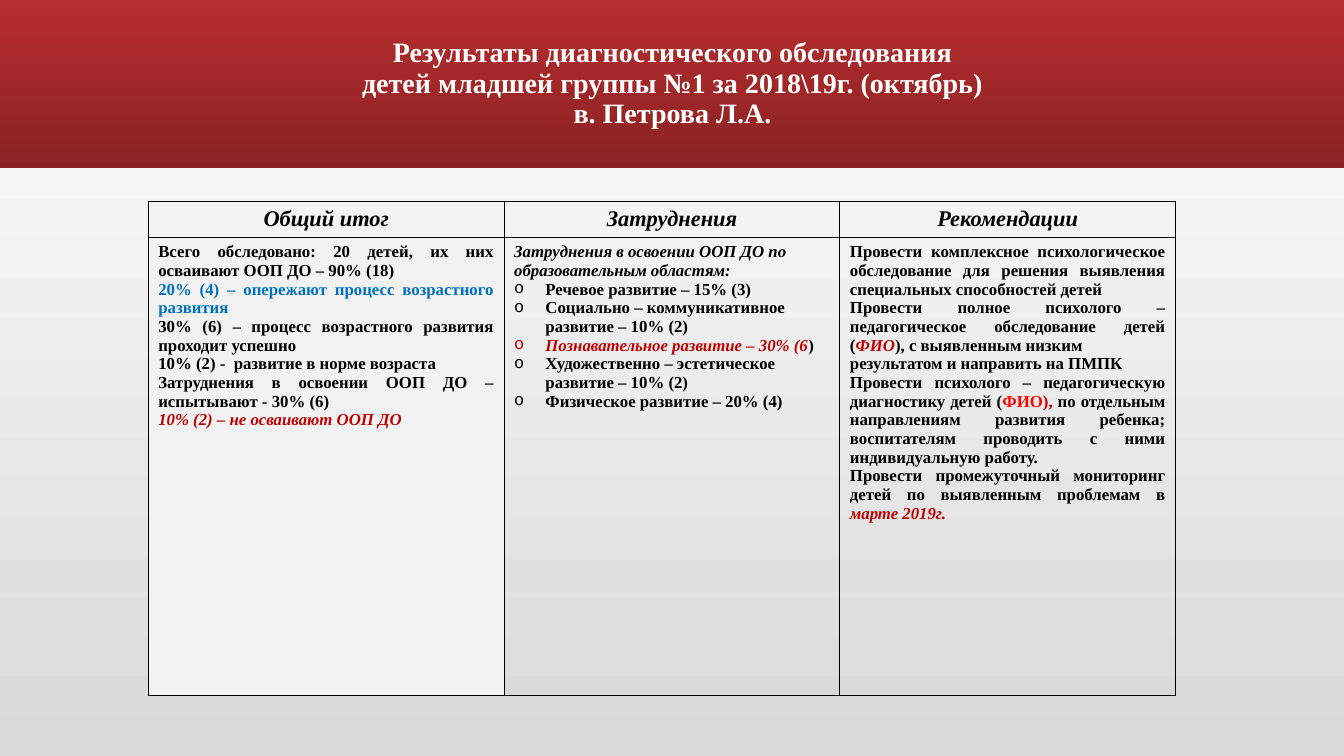
"""Build the slide with the diagnostic results of the nursery group."""
from lxml.etree import SubElement
from pptx import Presentation
from pptx.dml.color import RGBColor
from pptx.enum.shapes import MSO_SHAPE
from pptx.enum.text import MSO_ANCHOR, PP_ALIGN
from pptx.oxml.ns import qn
from pptx.util import Inches, Pt

BLACK, BLUE, DARK_RED, RED = "000000", "0070C0", "C00000", "FF0000"


def colour(value):
    return RGBColor.from_string(value)


def add_run(paragraph, text, size, value=BLACK, italic=False):
    run = paragraph.add_run()
    run.text = text
    run.font.name = "Times New Roman"
    run.font.size = Pt(size)
    run.font.bold = True
    run.font.italic = italic
    run.font.color.rgb = colour(value)


presentation = Presentation()
presentation.slide_width = Inches(13.33)
presentation.slide_height = Inches(7.5)
slide = presentation.slides.add_slide(presentation.slide_layouts[5])

title = slide.shapes.title
title.left, title.top = Inches(1.17), Inches(0.11)
title.width, title.height = Inches(11), Inches(1.45)

band = slide.shapes.add_shape(
    MSO_SHAPE.RECTANGLE, 0, 0, presentation.slide_width, Inches(1.67))
band.shadow.inherit = False
band.line.fill.background()
title.element.addprevious(band.element)

for fill, angle, stops in (
    (slide.background.fill, 90, ("D9D9D9", "FFFFFF")),
    (band.fill, 270, ("B82D2F", "8A2223")),
):
    fill.gradient()
    fill.gradient_angle = angle
    for stop, value in zip(fill.gradient_stops, stops):
        stop.color.rgb = colour(value)

title_lines = (
    "Результаты диагностического обследования",
    "детей младшей группы №1 за 2018\\19г. (октябрь)",
    "в. Петрова Л.А.",
)
title.text_frame.word_wrap = True
title.text_frame.vertical_anchor = MSO_ANCHOR.MIDDLE
heading = title.text_frame.paragraphs[0]
heading.alignment = PP_ALIGN.CENTER
heading.line_spacing = 0.9
for index, line in enumerate(title_lines):
    if index:
        heading.add_line_break()
    add_run(heading, line, 20, "FFFFFF")

headers = ("Общий итог", "Затруднения", "Рекомендации")
summary = (
    [("Всего обследовано: 20 детей, их них осваивают ООП ДО – 90% (18) ",)],
    [("20% (4) – опережают процесс возрастного развития", BLUE)],
    [("30% (6) – процесс возрастного развития проходит успешно",)],
    [("10% (2) -  развитие в норме возраста",)],
    [("Затруднения в освоении ООП ДО – испытывают - 30% (6)",)],
    [("10% (2) – не осваивают ООП ДО", DARK_RED, True)],
)
difficulties = (
    [("Затруднения в освоении ООП ДО по образовательным областям:", BLACK, True)],
    [("Речевое развитие – 15% (3)",)],
    [("Социально – коммуникативное развитие – 10% (2)",)],
    [("Познавательное развитие – 30% (6", DARK_RED, True), (")",)],
    [("Художественно – эстетическое развитие – 10% (2)",)],
    [("Физическое развитие – 20% (4)",)],
)
recommendations = (
    [("Провести комплексное психологическое обследование для решения "
      "выявления специальных способностей детей",)],
    [("Провести полное психолого – педагогическое обследование детей (",),
     ("ФИО", DARK_RED, True), ("), с выявленным низким ",)],
    [("результатом и направить на ПМПК",)],
    [("Провести психолого – педагогическую диагностику детей (",),
     ("ФИО", RED), ("),", DARK_RED),
     (" по отдельным направлениям развития ребенка; воспитателям "
      "проводить с ними индивидуальную работу.",)],
    [("Провести промежуточный мониторинг детей по выявленным проблемам в ",),
     ("марте 2019г.", DARK_RED, True)],
)

table = slide.shapes.add_table(
    2, 3, Inches(1.47), Inches(2), Inches(10.19), Inches(4.9)).table
table.first_row = False
table.horz_banding = False
for column, width in zip(table.columns, (3.53, 3.33, 3.33)):
    column.width = Inches(width)
for row, height in zip(table.rows, (0.36, 4.54)):
    row.height = Inches(height)

for cell in table.iter_cells():
    properties = cell._tc.get_or_add_tcPr()
    for side in ("a:lnL", "a:lnR", "a:lnT", "a:lnB"):
        border = SubElement(properties, qn(side), w=str(Pt(1)))
        border_fill = SubElement(border, qn("a:solidFill"))
        SubElement(border_fill, qn("a:srgbClr"), val=BLACK)
    cell.fill.background()

summary_fill = table.cell(1, 0).fill
summary_fill.solid()
summary_fill.fore_color.rgb = colour("F2F2F2")

for index, header in enumerate(headers):
    paragraph = table.cell(0, index).text_frame.paragraphs[0]
    paragraph.alignment = PP_ALIGN.CENTER
    add_run(paragraph, header, 16, BLACK, True)

for column, content in enumerate((summary, difficulties, recommendations)):
    text_frame = table.cell(1, column).text_frame
    for index, runs in enumerate(content):
        paragraph = text_frame.add_paragraph() if index else text_frame.paragraphs[0]
        is_list = content is difficulties
        paragraph.alignment = PP_ALIGN.LEFT if is_list else PP_ALIGN.JUSTIFY
        if is_list and index:
            properties = paragraph._p.get_or_add_pPr()
            properties.set("marL", str(Inches(0.31)))
            properties.set("indent", str(Inches(-0.31)))
            SubElement(properties, qn("a:buFont"), typeface="Courier New")
            SubElement(properties, qn("a:buChar"), char="o")
        for run in runs:
            add_run(paragraph, run[0], 12, *run[1:])

presentation.save("out.pptx")
